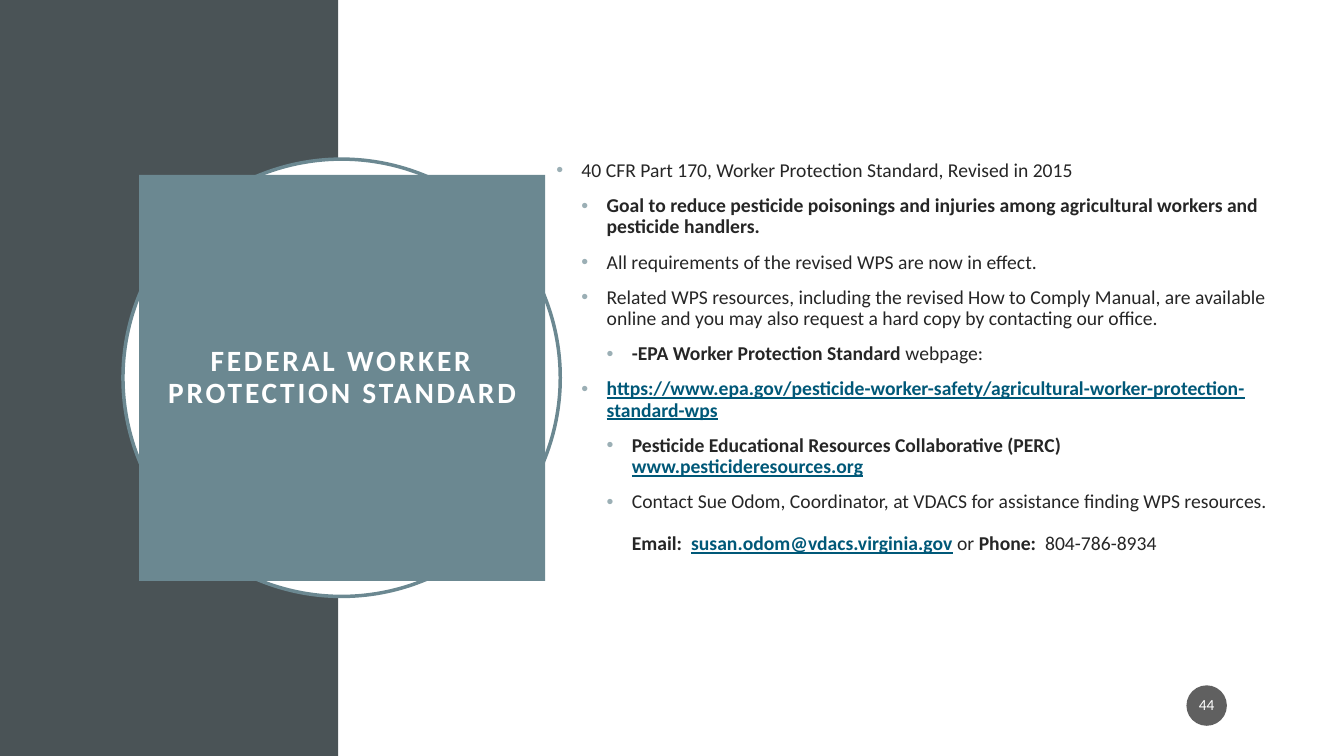
from lxml.etree import SubElement
from pptx import Presentation
from pptx.dml.color import RGBColor
from pptx.enum.shapes import MSO_SHAPE as Shape
from pptx.enum.text import MSO_ANCHOR as Anchor, PP_ALIGN as Align
from pptx.oxml.ns import qn
from pptx.util import Cm, Pt

FONT = "Calibri"
SLATE, TEAL, WHITE, INK, LINK, BULLET, BADGE = (
    "4A5356", "6B8891", "FFFFFF", "262626", "005878", "9BAFB5", "1D1D1D")
SLIDE_W, SLIDE_H = 33.87, 19.05
PANEL_W = 8.53
INDENT = 0.635

TITLE = "FEDERAL WORKER PROTECTION STANDARD"
PAGE_NUMBER = "44"

# Each line: indent level, bullet shown, space before in points, (text, style) spans
LINES = [
    (1, True, 0, [("40 CFR Part 170, Worker Protection Standard, Revised in 2015", "plain")]),
    (2, True, 10, [("Goal to reduce pesticide poisonings and injuries among "
                    "agricultural workers and pesticide handlers.", "bold")]),
    (2, True, 10, [("All requirements of the revised WPS are now in effect.", "plain")]),
    (2, True, 10, [("Related WPS resources, including the revised How to Comply Manual, are "
                    "available online and you may also request a hard copy by contacting "
                    "our office.", "plain")]),
    (3, True, 10, [("-EPA Worker Protection Standard ", "bold"), ("webpage:", "plain")]),
    (2, True, 10, [("https://www.epa.gov/pesticide-worker-safety/"
                    "agricultural-worker-protection-standard-wps", "link")]),
    (3, True, 10, [("Pesticide Educational Resources Collaborative (PERC) ", "bold"),
                   ("www.pesticideresources.org", "link")]),
    (3, True, 10, [("Contact Sue Odom, Coordinator, at VDACS for assistance finding "
                    "WPS resources.", "plain")]),
    (3, False, 15, [("Email:  ", "bold"), ("susan.odom@vdacs.virginia.gov", "link"),
                    (" or ", "plain"), ("Phone:  ", "bold"), ("804-786-8934", "plain")]),
]


def rgb(code):
    return RGBColor.from_string(code)


def add_block(page, kind, left, top, width, height, fill, line=None):
    block = page.shapes.add_shape(kind, Cm(left), Cm(top), Cm(width), Cm(height))
    block.shadow.inherit = False
    block.fill.solid()
    block.fill.fore_color.rgb = rgb(fill)
    if line:
        block.line.color.rgb = rgb(line)
        block.line.width = Pt(2.5)
    else:
        block.line.fill.background()
    return block


def set_font(font, size, color, bold=False):
    font.name, font.size, font.bold = FONT, Pt(size), bold
    font.color.rgb = rgb(color)


def write_centred(block, text, size, bold, inset):
    frame = block.text_frame
    frame.vertical_anchor = Anchor.MIDDLE
    frame.margin_left = frame.margin_right = Cm(inset)
    para = frame.paragraphs[0]
    para.alignment = Align.CENTER
    para.line_spacing = 0.9
    para.add_run().text = text
    set_font(para.font, size, WHITE, bold)
    return para


def set_bullet(para, level, shown):
    """Hang the paragraph at its level, with or without a bullet."""
    props = para._p.get_or_add_pPr()
    props.set("marL", str(Cm(INDENT * level)))
    props.set("indent", str(-Cm(INDENT) if shown else 0))
    if shown:
        color = SubElement(props, qn("a:buClr"))
        SubElement(color, qn("a:srgbClr"), val=BULLET)
        SubElement(props, qn("a:buFont"), typeface="Arial")
        SubElement(props, qn("a:buChar"), char="•")
    else:
        SubElement(props, qn("a:buNone"))


def add_body(page):
    box = page.shapes.add_textbox(Cm(13.77), Cm(1.52), Cm(18.59), Cm(15))
    frame = box.text_frame
    frame.word_wrap = True
    frame.vertical_anchor = Anchor.MIDDLE
    for number, (level, bulleted, before, spans) in enumerate(LINES):
        para = frame.add_paragraph() if number else frame.paragraphs[0]
        para.line_spacing = 0.9
        para.space_before = Pt(before)
        set_bullet(para, level, bulleted)
        set_font(para.font, 14, INK)
        for text, style in spans:
            span = para.add_run()
            span.text = text
            set_font(span.font, 14, LINK if style == "link" else INK, style != "plain")
            span.font.underline = style == "link"


def main():
    deck = Presentation()
    deck.slide_width, deck.slide_height = Cm(SLIDE_W), Cm(SLIDE_H)
    page = deck.slides.add_slide(deck.slide_layouts[6])

    add_block(page, Shape.RECTANGLE, 0, 0, PANEL_W, SLIDE_H, SLATE)
    add_block(page, Shape.RECTANGLE, PANEL_W, 0, SLIDE_W - PANEL_W, SLIDE_H, WHITE)
    add_block(page, Shape.OVAL, 3.1, 4.01, 11.02, 11.02, WHITE, TEAL)
    title = add_block(page, Shape.RECTANGLE, 3.51, 4.41, 10.23, 10.23, TEAL)
    heading = write_centred(title, TITLE, 21, True, 0.5)
    heading.runs[0].font._element.set("spc", "200")

    add_body(page)

    badge = add_block(page, Shape.OVAL, 29.9, 17.27, 1.02, 1.02, BADGE)
    tint = badge.fill._xPr.find(qn("a:solidFill"))[0]
    SubElement(tint, qn("a:alpha"), val="70000")
    write_centred(badge, PAGE_NUMBER, 11, False, 0.05)
    badge.text_frame.word_wrap = False

    deck.save("out.pptx")


if __name__ == "__main__":
    main()
